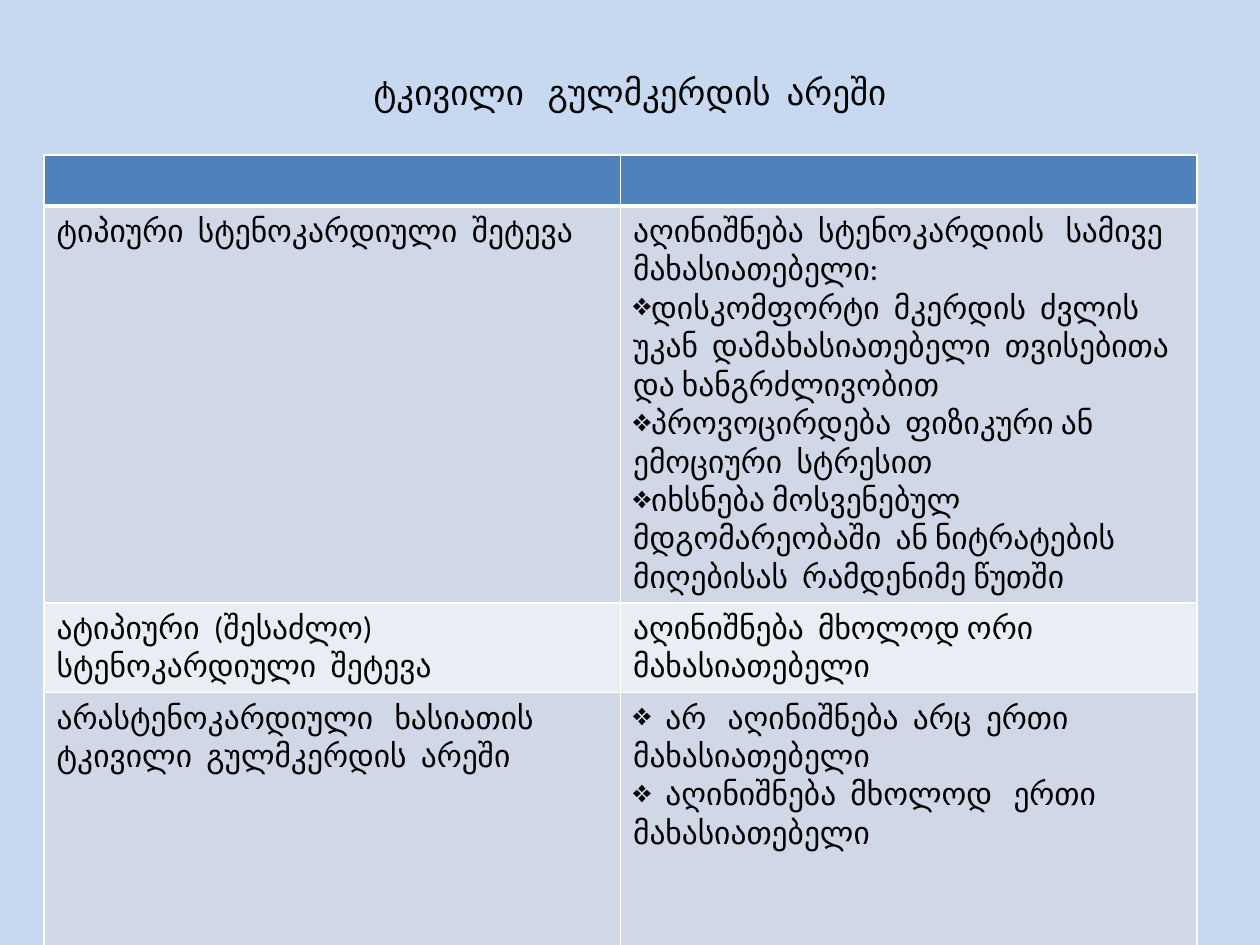
from pptx import Presentation
from pptx.dml.color import RGBColor
from pptx.enum.text import MSO_ANCHOR, PP_ALIGN
from pptx.oxml.xmlchemy import OxmlElement
from pptx.util import Inches, Pt

THEME = {
    "font": "Calibri", "title_size": 20, "body_size": 18,
    "background": "C6D9F1", "text": "000000", "border": "FFFFFF",
    "header": "4F81BD", "bands": ("D0D8E8", "E9EDF4"),
}
BULLET = "❖"
TITLE = "ტკივილი   გულმკერდის  არეში"
# Each cell is a list of paragraphs; a leading BULLET marks a list item.
ROWS = [
    ([], []),
    (["ტიპიური  სტენოკარდიული  შეტევა"],
     ["აღინიშნება  სტენოკარდიის   სამივე  მახასიათებელი:",
      "❖დისკომფორტი  მკერდის  ძვლის  უკან  დამახასიათებელი  თვისებითა და ხანგრძლივობით",
      "❖პროვოცირდება  ფიზიკური ან ემოციური  სტრესით",
      "❖იხსნება მოსვენებულ  მდგომარეობაში  ან ნიტრატების მიღებისას  რამდენიმე წუთში"]),
    (["ატიპიური  (შესაძლო) სტენოკარდიული  შეტევა"],
     ["აღინიშნება  მხოლოდ ორი  მახასიათებელი"]),
    (["არასტენოკარდიული   ხასიათის  ტკივილი  გულმკერდის  არეში"],
     ["❖  არ   აღინიშნება  არც  ერთი  მახასიათებელი",
      "❖  აღინიშნება  მხოლოდ   ერთი  მახასიათებელი"]),
]
ROW_HEIGHTS = [0.4, 3.15, 0.71, 2.74]
TABLE_LEFT, TABLE_TOP, TABLE_WIDTH = 0.35, 1.23, 9.15


def rgb(name):
    return RGBColor.from_string(name)


def style(p, size):
    p.font.name = THEME["font"]
    p.font.size = Pt(size)
    p.font.bold = False
    p.font.color.rgb = rgb(THEME["text"])


def add_bullet(p):
    pPr = p._p.get_or_add_pPr()
    pPr.set("marL", "0")
    pPr.set("indent", "0")
    bullet = OxmlElement("a:buChar")
    bullet.set("char", BULLET)
    pPr.insert(0, bullet)


def set_borders(cell, bottom):
    """White lines on all four sides; the bottom one has its own width."""
    tcPr = cell._tc.get_or_add_tcPr()
    widths = {"lnL": 1, "lnR": 1, "lnT": 1, "lnB": bottom}
    for i, (side, width) in enumerate(widths.items()):
        ln = OxmlElement(f"a:{side}")
        ln.set("w", str(Pt(width)))
        fill = OxmlElement("a:solidFill")
        color = OxmlElement("a:srgbClr")
        color.set("val", THEME["border"])
        fill.append(color)
        ln.append(fill)
        tcPr.insert(i, ln)


def fill_cell(cell, paragraphs, row):
    tf = cell.text_frame
    for i, text in enumerate(paragraphs):
        p = tf.paragraphs[0] if i == 0 else tf.add_paragraph()
        p.text = text.removeprefix(BULLET)
        style(p, THEME["body_size"])
        if text.startswith(BULLET):
            add_bullet(p)
    cell.fill.solid()
    cell.fill.fore_color.rgb = rgb(THEME["bands"][(row - 1) % 2] if row else THEME["header"])
    set_borders(cell, 1 if row else 3)


def main():
    prs = Presentation()
    prs.slide_width, prs.slide_height = Inches(10), Inches(7.5)
    s = prs.slides.add_slide(prs.slide_layouts[5])
    s.background.fill.solid()
    s.background.fill.fore_color.rgb = rgb(THEME["background"])

    title = s.shapes.title
    title.left, title.top = Inches(0.5), Inches(0.3)
    title.width, title.height = Inches(9), Inches(0.85)
    tf = title.text_frame
    tf.text = TITLE
    tf.vertical_anchor = MSO_ANCHOR.MIDDLE
    tf.paragraphs[0].alignment = PP_ALIGN.CENTER
    style(tf.paragraphs[0], THEME["title_size"])

    table = s.shapes.add_table(
        len(ROWS), 2, Inches(TABLE_LEFT), Inches(TABLE_TOP),
        Inches(TABLE_WIDTH), Inches(sum(ROW_HEIGHTS))).table
    for r, (cells, height) in enumerate(zip(ROWS, ROW_HEIGHTS)):
        table.rows[r].height = Inches(height)
        for c, paragraphs in enumerate(cells):
            fill_cell(table.cell(r, c), paragraphs, r)

    prs.save("out.pptx")


if __name__ == "__main__":
    main()
